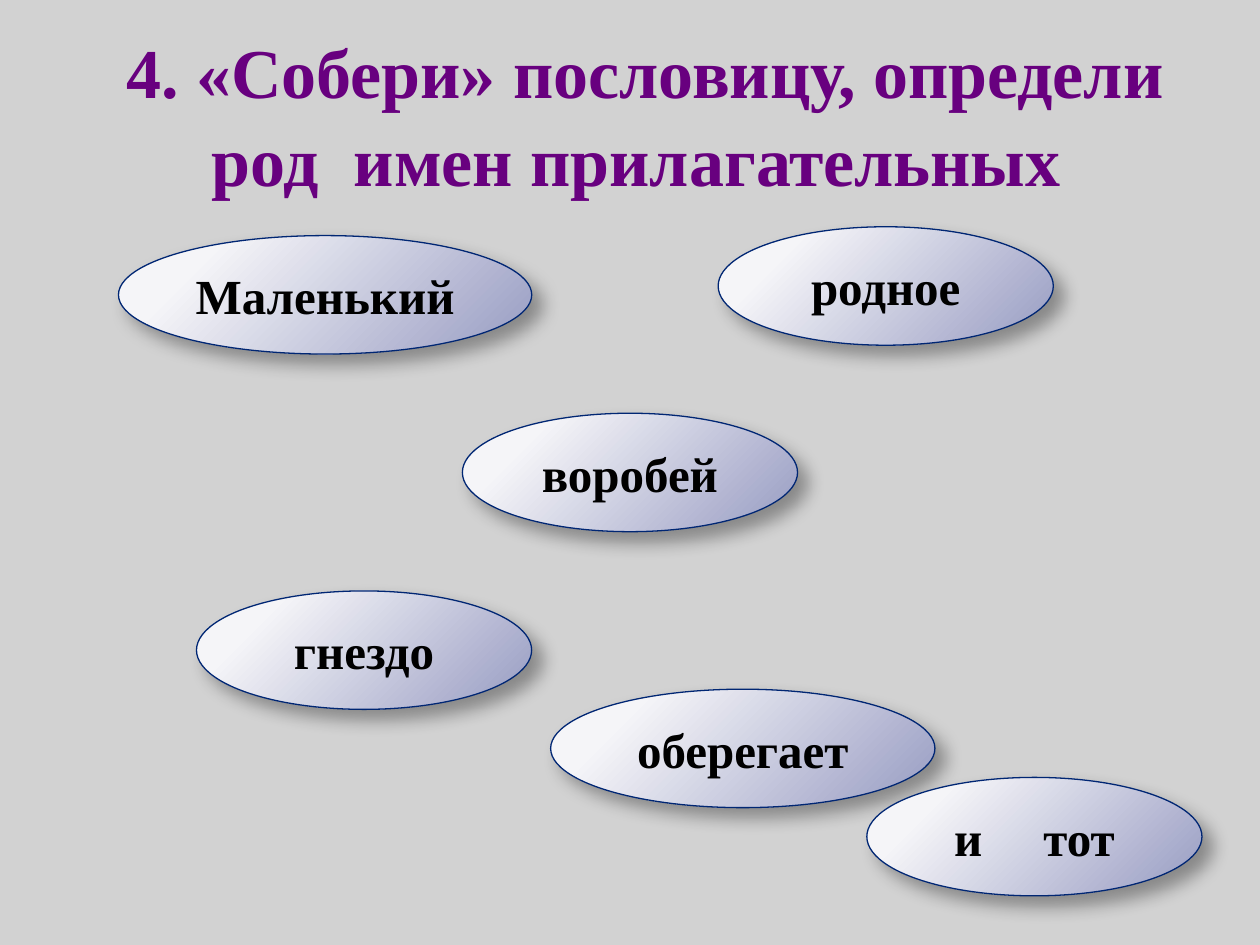
from lxml import etree
from pptx import Presentation
from pptx.dml.color import RGBColor
from pptx.enum.shapes import MSO_SHAPE
from pptx.enum.text import MSO_ANCHOR, PP_ALIGN
from pptx.oxml.ns import qn
from pptx.util import Inches, Pt

OVAL, MIDDLE, CENTER = MSO_SHAPE.OVAL, MSO_ANCHOR.MIDDLE, PP_ALIGN.CENTER
COLORS = {"bg": "D2D2D2", "title": "68007F", "light": "F5F5F8", "dark": "979BC2",
          "line": "002673", "word": "000000", "shadow": "000000"}
FONT = "Times New Roman"


def write(tf, parts, size, color, gap=0):
    """Centred bold text; parts are joined by one space widened by gap points."""
    tf.word_wrap = True
    tf.vertical_anchor = MIDDLE
    p = tf.paragraphs[0]
    p.alignment = CENTER
    p.font.name, p.font.size, p.font.bold = FONT, Pt(size), True
    p.font.color.rgb = RGBColor.from_string(COLORS[color])
    for i, part in enumerate(parts):
        if i:
            r = p.add_run()
            r.text = " "
            r.font.size = Pt(size)
            r.font._element.set("spc", str(gap * 100))
        p.add_run().text = part
    for r in p.runs:
        r.font.name, r.font.size, r.font.bold = FONT, Pt(size), True
        r.font.color.rgb = RGBColor.from_string(COLORS[color])
    return p


def style_oval(s):
    """Radial gradient from the top left corner and a soft shadow."""
    s.line.color.rgb = RGBColor.from_string(COLORS["line"])
    s.line.width = Pt(0.75)
    s.shadow.inherit = False
    s.fill.gradient()
    grad = s._element.spPr.find(qn("a:gradFill"))
    for stop, position, color in zip(s.fill.gradient_stops, (0.2, 1), ("light", "dark")):
        stop.position = position
        stop.color.rgb = RGBColor.from_string(COLORS[color])
    grad.remove(grad.find(qn("a:lin")))
    radial = etree.SubElement(grad, qn("a:path"), path="circle")
    etree.SubElement(radial, qn("a:fillToRect"), l="-15000", t="-15000", r="115000", b="115000")
    effects = s._element.spPr.find(qn("a:effectLst"))
    shadow = etree.SubElement(effects, qn("a:outerShdw"), blurRad=str(Pt(10.2)),
                              dist=str(Pt(8)), dir="2700000", algn="tl", rotWithShape="0")
    tint = etree.SubElement(shadow, qn("a:srgbClr"), val=COLORS["shadow"])
    etree.SubElement(tint, qn("a:alpha"), val="35000")


prs = Presentation()
prs.slide_width, prs.slide_height = Inches(10), Inches(7.5)
slide = prs.slides.add_slide(prs.slide_layouts[5])
slide.background.fill.solid()
slide.background.fill.fore_color.rgb = RGBColor.from_string(COLORS["bg"])

# Title
s = slide.shapes.title
s.left, s.top, s.width, s.height = Inches(0.55), Inches(0.31), Inches(9), Inches(1.09)
tf = s.text_frame
tf.margin_top = Inches(0.13)
p = write(tf, ["4. «Собери» пословицу, определи род", "имен прилагательных"], 40, "title", 10)
p.line_spacing = 1.05
p._p.get_or_add_pPr().set("indent", str(Pt(10)))

# Scattered words: parts, left, top, width
OVAL_W, OVAL_H = 2.66, 0.94
WORDS = [
    (["воробей"], 3.67, 3.28, OVAL_W),
    (["родное"], 5.7, 1.8, OVAL_W),
    (["гнездо"], 1.56, 4.69, OVAL_W),
    (["оберегает"], 4.37, 5.47, 3.05),
    (["Маленький"], 0.94, 1.87, 3.28),
    (["и", "тот"], 6.88, 6.17, OVAL_W),
]
for parts, left, top, width in WORDS:
    s = slide.shapes.add_shape(OVAL, Inches(left), Inches(top), Inches(width), Inches(OVAL_H))
    style_oval(s)
    write(s.text_frame, parts, 28, "word", 28)

prs.save("out.pptx")
